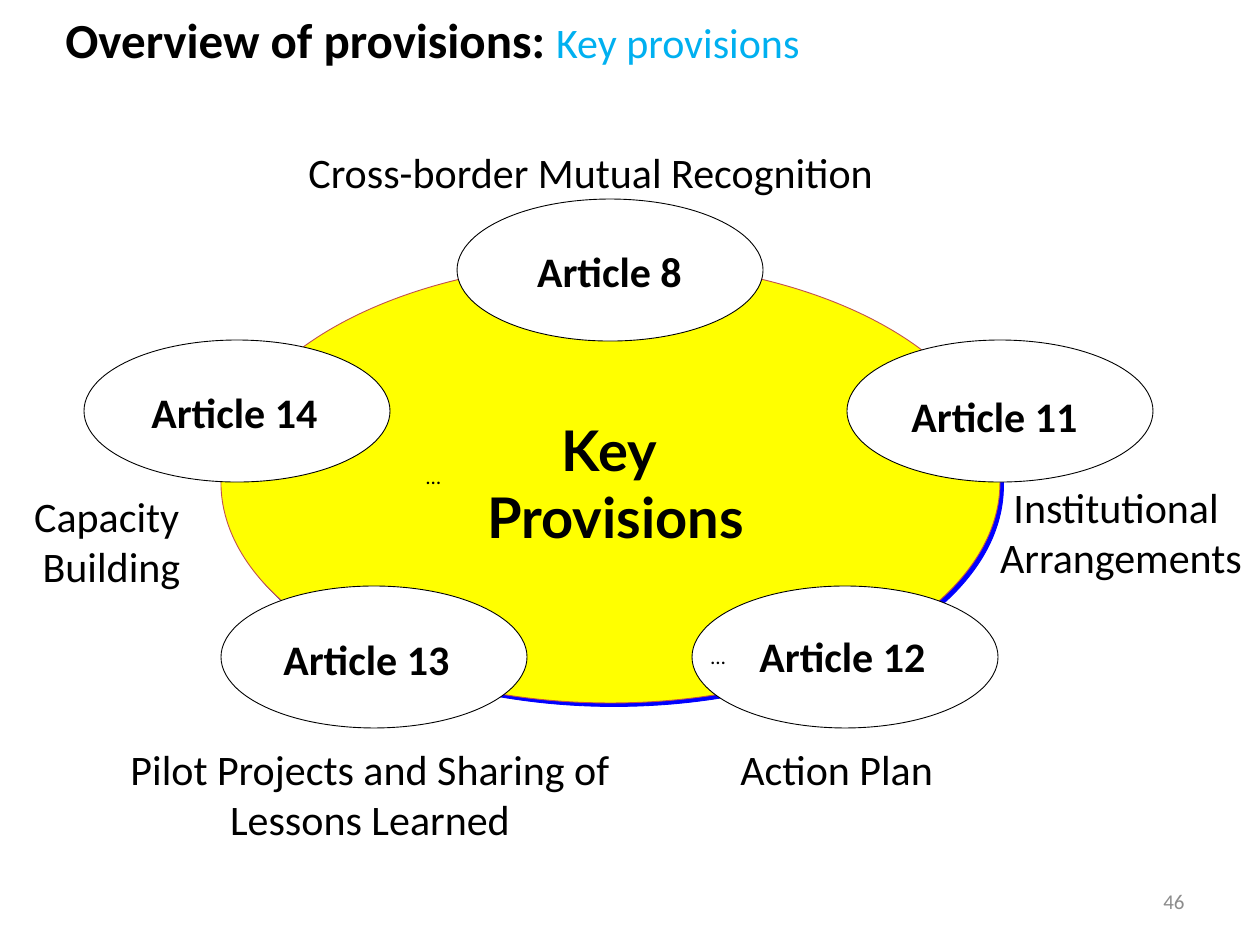
from lxml import etree
from pptx import Presentation
from pptx.dml.color import RGBColor
from pptx.enum.shapes import MSO_SHAPE as Shape
from pptx.enum.text import MSO_ANCHOR as Anchor, MSO_AUTO_SIZE as Fit, PP_ALIGN as Align
from pptx.oxml import parse_xml
from pptx.oxml.ns import nsdecls
from pptx.util import Emu, Pt

BLACK = RGBColor(0, 0, 0)
WHITE = RGBColor(255, 255, 255)
GREY = RGBColor(0x8C, 0x8C, 0x8C)
YELLOW = RGBColor(255, 255, 0)
RED = RGBColor(0xC0, 0x50, 0x4D)
CYAN = RGBColor(0, 0xB0, 0xF0)

OVAL = (306, 142)
ARTICLES = [
    ("Article 8", (457, 199), (476, 246)),
    ("Article 11", (847, 340), (861, 391)),
    ("Article 12", (692, 586), (709, 631)),
    ("Article 13", (221, 586), (233, 634)),
    ("Article 14", (84, 340), (101, 387)),
]
TOPICS = [
    ("Capacity \nBuilding", (10, 484, 203, 115), Align.CENTER, False),
    ("Institutional \nArrangements", (975, 475, 292, 115), Align.CENTER, False),
    ("Action Plan", (728, 737, 241, 63), Align.LEFT, False),
    ("Pilot Projects and Sharing of Lessons Learned",
     (55, 737, 630, 115), Align.CENTER, True),
    ("Cross-border Mutual Recognition", (296, 140, 649, 63), Align.LEFT, False),
]
DOTS = [(711, 644, 267, 25), (426, 464, 369, 25)]


def px(num):
    return Emu(round(num * 914400 / 126))


def place(box):
    return [px(num) for num in box]


def style(run, size, color=BLACK, bold=False, face="Calibri"):
    font = run.font
    font.name = face
    font.size = Pt(size)
    font.bold = bold
    font.color.rgb = color


def fill_text(frame, text, size, align=Align.LEFT, **look):
    frame.text = text
    for para in frame.paragraphs:
        para.alignment = align
        for run in para.runs:
            style(run, size, **look)


def inset(frame, left=0):
    frame.margin_left = px(left)
    frame.margin_top = frame.margin_right = frame.margin_bottom = 0
    frame.vertical_anchor = Anchor.MIDDLE


def add_text(slide, box, text, size, align=Align.LEFT, wrap=True, **look):
    frame = slide.shapes.add_textbox(*place(box)).text_frame
    frame.word_wrap = wrap
    frame.auto_size = Fit.SHAPE_TO_FIT_TEXT
    fill_text(frame, text, size, align, **look)
    return frame


def add_oval(slide, box, fill, line):
    oval = slide.shapes.add_shape(Shape.OVAL, *place(box))
    oval.shadow.inherit = False
    oval.fill.solid()
    oval.fill.fore_color.rgb = fill
    oval.line.color.rgb = line
    oval.line.width = Pt(0.5)
    return oval


def add_shadow(shape):
    effects = shape._element.spPr.find(
        "{http://schemas.openxmlformats.org/drawingml/2006/main}effectLst")
    shadow = parse_xml(
        f'<a:outerShdw {nsdecls("a")} dist="{Pt(2.8)}" dir="2700000" '
        'algn="ctr" rotWithShape="0"><a:srgbClr val="0000FF"/></a:outerShdw>')
    effects.append(shadow)


def add_hub(slide):
    hub = add_oval(slide, (221, 262, 779, 441), YELLOW, RED)
    add_shadow(hub)
    frame = hub.text_frame
    frame.word_wrap = False
    inset(frame, 10)
    fill_text(frame, "Key \nProvisions", 32, Align.CENTER, bold=True, face="Lato")


def add_title(slide):
    frame = add_text(slide, (53, 3, 882, 72), "Overview of provisions: ", 28,
                     wrap=False, bold=True)
    run = frame.paragraphs[0].add_run()
    run.text = "Key provisions"
    style(run, 24, CYAN)


def add_page(slide):
    frame = add_text(slide, (903, 876, 294, 50), "46", 12, Align.RIGHT, color=GREY)
    frame.auto_size = Fit.NONE
    frame.vertical_anchor = Anchor.MIDDLE


def main():
    deck = Presentation()
    deck.slide_width, deck.slide_height = px(1260), px(945)
    slide = deck.slides.add_slide(deck.slide_layouts[6])
    add_page(slide)
    add_hub(slide)
    for name, spot, label in ARTICLES:
        add_oval(slide, spot + OVAL, WHITE, BLACK)
        inset(add_text(slide, label + (267, 50), name, 24, Align.CENTER, bold=True))
    for box in DOTS:
        inset(add_text(slide, box, "…", 12))
    for text, box, align, wrap in TOPICS:
        add_text(slide, box, text, 24, align, wrap)
    add_title(slide)
    deck.save("out.pptx")


if __name__ == "__main__":
    main()
